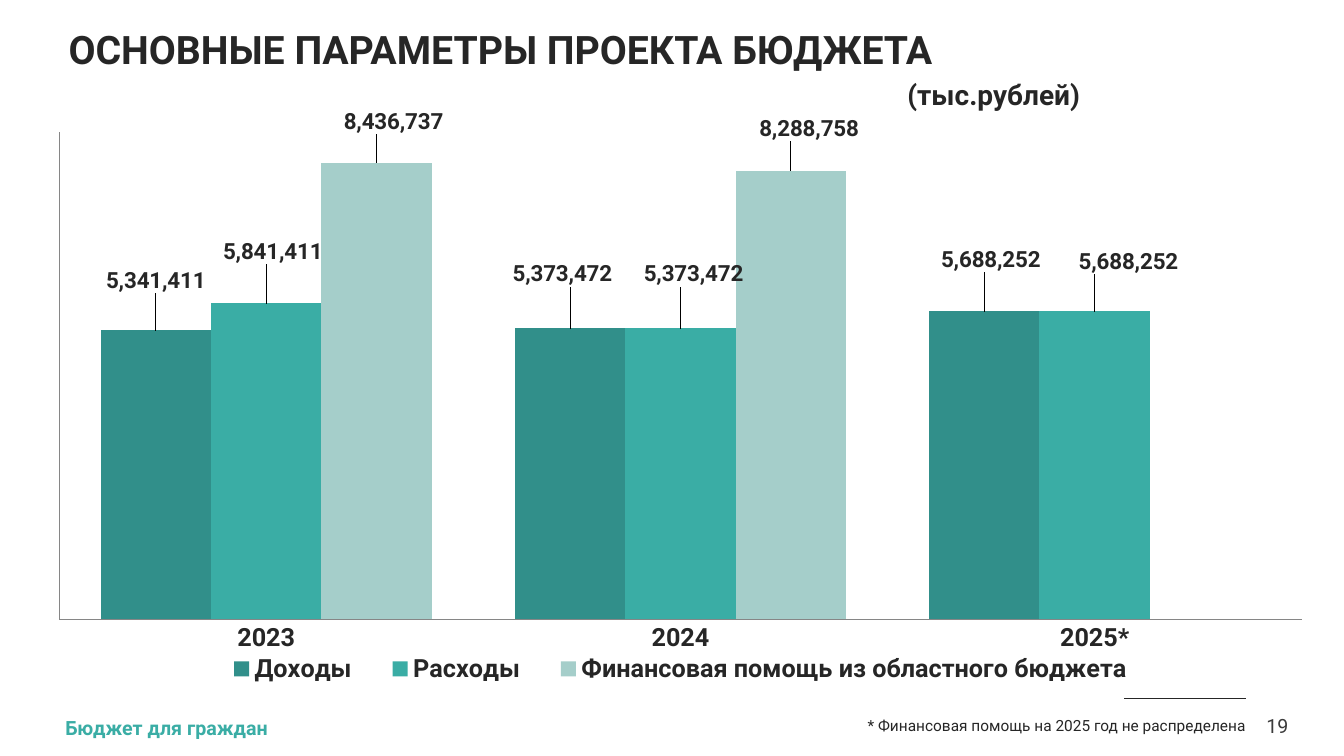
from lxml import etree
from pptx import Presentation
from pptx.chart.data import CategoryChartData
from pptx.dml.color import RGBColor
from pptx.enum.chart import XL_CHART_TYPE as ChartType, XL_LEGEND_POSITION as LegendPosition
from pptx.enum.chart import XL_LABEL_POSITION as LabelPosition, XL_TICK_LABEL_POSITION as TickLabels
from pptx.enum.chart import XL_TICK_MARK as TickMark
from pptx.enum.shapes import MSO_CONNECTOR as Connector
from pptx.enum.text import MSO_ANCHOR as Anchor, PP_ALIGN as Align
from pptx.oxml.ns import qn
from pptx.util import Inches, Pt

COLORS = {"text": "262626", "page": "3C3C3C", "axis": "868686",
          "income": "318F8A", "expense": "3AADA5", "aid": "A5CECA"}
FONT = "Roboto"
YEARS = ["2023", "2024", "2025*"]
# name, colour, values, label shifts as fractions of the chart size
BUDGET = [
    ("Доходы", "income", (5341411, 5373472, 5688252),
     ((0, -0.055), (-0.006, -0.063), (0.005, -0.058))),
    ("Расходы", "expense", (5841411, 5373472, 5688252),
     ((0.005, -0.058), (0.01, -0.063), (0.026, -0.055))),
    ("Финансовая помощь из областного бюджета", "aid", (8436737, 8288758, None),
     ((0.013, -0.04), (0.014, -0.042))),
]


def rgb(name):
    return RGBColor.from_string(COLORS[name])


def style_font(font, size, color="text", bold=False):
    font.name, font.size, font.bold = FONT, Pt(size), bold
    font.color.rgb = rgb(color)


def add_text(slide, box, text, size, color="text", bold=False, align=Align.LEFT):
    frame = slide.shapes.add_textbox(*map(Inches, box)).text_frame
    frame.word_wrap = True
    frame.vertical_anchor = Anchor.MIDDLE
    frame.margin_left = frame.margin_right = frame.margin_top = frame.margin_bottom = 0
    paragraph = frame.paragraphs[0]
    paragraph.alignment = align
    run = paragraph.add_run()
    run.text = text
    style_font(run.font, size, color, bold)


def make_layout(**settings):
    layout = etree.Element(qn("c:layout"))
    manual = etree.SubElement(layout, qn("c:manualLayout"))
    for tag, value in settings.items():
        etree.SubElement(manual, qn(f"c:{tag}")).set("val", str(value))
    return layout


def replace_layout(parent, layout, after=None):
    for old in parent.findall(qn("c:layout")):
        parent.remove(old)
    if after is None:
        parent.insert(0, layout)
    else:
        parent.find(qn(after)).addnext(layout)


def add_heading(slide, left, top, width):
    add_text(slide, (left, top, width, 0.46), "ОСНОВНЫЕ ПАРАМЕТРЫ ПРОЕКТА БЮДЖЕТА", 28, bold=True)
    add_text(slide, (left + 8.32, top + 0.52, 3, 0.34), "(тыс.рублей)", 20, bold=True)


def style_axes(chart):
    for axis in (chart.category_axis, chart.value_axis):
        axis.has_major_gridlines = False
        axis.major_tick_mark = axis.minor_tick_mark = TickMark.NONE
        axis.format.line.color.rgb = rgb("axis")
        axis.format.line.width = Pt(0.75)
    chart.value_axis.tick_label_position = TickLabels.NONE
    chart.value_axis.minimum_scale = 0
    chart.value_axis.maximum_scale = 9000000
    style_font(chart.category_axis.tick_labels.font, 18, bold=True)


def style_series(series, color, shifts):
    series.format.fill.solid()
    series.format.fill.fore_color.rgb = rgb(color)
    series.invert_if_negative = False
    labels = series.data_labels
    labels.show_value = True
    labels.number_format, labels.number_format_is_linked = "#,##0", False
    labels.position = LabelPosition.OUTSIDE_END
    style_font(labels.font, 16, bold=True)
    for index, (dx, dy) in enumerate(shifts):
        label = series.points[index].data_label
        style_font(label.font, 16, bold=True)
        label.position = LabelPosition.OUTSIDE_END
    for element, (dx, dy) in zip(series.data_labels._element.findall(qn("c:dLbl")), shifts):
        replace_layout(element, make_layout(x=dx, y=dy), after="c:idx")


def add_budget_chart(slide, box):
    data = CategoryChartData(number_format="#,##0")
    data.categories = YEARS
    for name, _, values, _ in BUDGET:
        data.add_series(name, values)
    chart = slide.shapes.add_chart(ChartType.COLUMN_CLUSTERED, *map(Inches, box), data).chart
    chart.has_title = False
    style_font(chart.font, 18, bold=True)
    style_axes(chart)
    plot = chart.plots[0]
    plot.gap_width, plot.overlap, plot.vary_by_categories = 75, 0, False
    for series, (_, color, _, shifts) in zip(plot.series, BUDGET):
        style_series(series, color, shifts)
    chart.has_legend = True
    chart.legend.position = LegendPosition.BOTTOM
    chart.legend.include_in_layout = False
    style_font(chart.legend.font, 18, bold=True)
    replace_layout(chart.legend._element, make_layout(
        xMode="edge", yMode="edge", x=0.13, y=0.9, w=0.74, h=0.06), after="c:legendPos")
    plot_area = chart._chartSpace.find(qn("c:chart")).find(qn("c:plotArea"))
    replace_layout(plot_area, make_layout(
        layoutTarget="inner", xMode="edge", yMode="edge", x=0.02, y=0.03, w=0.96, h=0.817))


def add_footer(slide, left, top, right):
    add_text(slide, (left, top, 4, 0.24), "Бюджет для граждан", 14, "expense", True)
    add_text(slide, (right - 6.42, top - 0.02, 6, 0.24),
             "* Финансовая помощь на 2025 год не распределена", 11, align=Align.RIGHT)
    add_text(slide, (right - 0.3, top - 0.02, 0.3, 0.24), "19", 14, "page", align=Align.RIGHT)
    rule = slide.shapes.add_connector(
        Connector.STRAIGHT, Inches(right - 1.63), Inches(top - 0.17),
        Inches(right - 0.42), Inches(top - 0.17))
    rule.line.color.rgb = rgb("text")
    rule.line.width = Pt(0.5)
    etree.SubElement(rule._element.spPr, qn("a:effectLst"))


def main():
    deck = Presentation()
    deck.slide_width, deck.slide_height = Inches(13.33), Inches(7.5)
    slide = deck.slides.add_slide(deck.slide_layouts[6])
    add_heading(slide, 0.68, 0.25, 11.7)
    add_budget_chart(slide, (0.33, 1.09, 12.84, 5.96))
    add_footer(slide, 0.65, 7.1, 12.78)
    deck.save("out.pptx")


if __name__ == "__main__":
    main()
